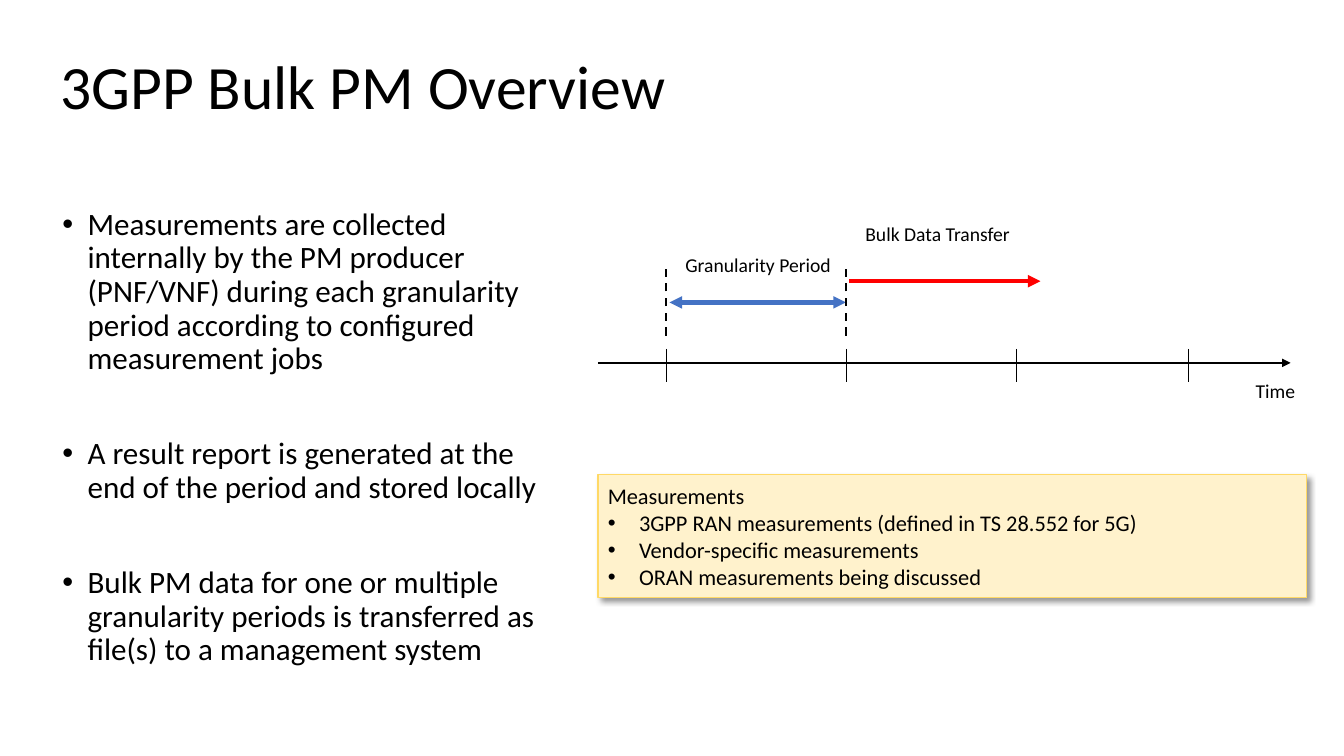
"""Build the 3GPP Bulk PM Overview slide."""
import pptx
import pptx.dml.color
import pptx.enum.dml
import pptx.enum.shapes
import pptx.enum.text
import pptx.oxml
import pptx.oxml.ns
import pptx.util

PX = 9144
ALIGN = pptx.enum.text.PP_ALIGN
ANCHOR = pptx.enum.text.MSO_ANCHOR
NS = pptx.oxml.ns.nsdecls("a")


def color(code):
    return pptx.dml.color.RGBColor.from_string(code)


def write(frame, lines, size, look, indent=0, plain=0):
    frame.word_wrap = True
    for i, line in enumerate(lines):
        para = frame.paragraphs[0] if i == 0 else frame.add_paragraph()
        run = para.add_run()
        run.text = line
        for key, val in {"name": "Calibri", "size": pptx.util.Pt(size)}.items():
            setattr(run.font, key, val)
        run.font.color.rgb = color("000000")
        for key, val in look.items():
            if key != "space_before" or i > 0:
                setattr(para, key, val)
        if indent and i >= plain:
            props = para._p.get_or_add_pPr()
            props.set("marL", str(indent * PX))
            props.set("indent", str(-indent * PX))
            props.append(pptx.oxml.parse_xml(f'<a:buFont {NS} typeface="Arial"/>'))
            props.append(pptx.oxml.parse_xml(f'<a:buChar {NS} char="•"/>'))


deck = pptx.Presentation()
deck.slide_width = 1333 * PX
deck.slide_height = 750 * PX
slide = deck.slides.add_slide(deck.slide_layouts[5])
shapes = slide.shapes

title = shapes.title
place = {"left": 52, "top": 52, "width": 914, "height": 118}
for key, val in place.items():
    setattr(title, key, val * PX)
frame = title.text_frame
fit = {"margin_left": 8 * PX, "margin_right": 8 * PX,
       "margin_top": 4 * PX, "margin_bottom": 4 * PX,
       "vertical_anchor": ANCHOR.TOP,
       "auto_size": pptx.enum.text.MSO_AUTO_SIZE.NONE}
for key, val in fit.items():
    setattr(frame, key, val)
write(frame, ["3GPP Bulk PM Overview"], 44,
      {"alignment": ALIGN.LEFT, "line_spacing": 0.9})

body = shapes.add_textbox(52 * PX, 202 * PX, 508 * PX, 480 * PX)
points = [
    "Measurements are collected internally by the PM producer (PNF/VNF) "
    "during each granularity period according to configured measurement jobs",
    "A result report is generated at the end of the period and stored locally",
    "Bulk PM data for one or multiple granularity periods is transferred "
    "as file(s) to a management system",
]
write(body.text_frame, points, 22.2,
      {"line_spacing": 0.9, "space_before": pptx.util.Pt(44)}, indent=25)

ticks = [661, 839, 1008, 1179]
start, end = ticks[:2]
lines = [(593, 360, 1280, 360, "000000", 1.5, ["tailEnd"])]
lines += [(x, 346, x, 379, "000000", 0.5, []) for x in ticks]
lines += [
    (end, 300, start + 3, 300, "4472C4", 3, ["headEnd", "tailEnd"]),
    (1032, 279, end + 3, 279, "FF0000", 3, ["headEnd"]),
]
lines += [(x, 333, x, 267, "000000", 1.5, ["dash"]) for x in (end, start)]
for x1, y1, x2, y2, tint, weight, marks in lines:
    link = shapes.add_connector(pptx.enum.shapes.MSO_CONNECTOR.STRAIGHT,
                                x1 * PX, y1 * PX, x2 * PX, y2 * PX)
    link.line.color.rgb = color(tint)
    link.line.width = pptx.util.Pt(weight)
    for mark in marks:
        if mark == "dash":
            link.line.dash_style = pptx.enum.dml.MSO_LINE.DASH
        else:
            link.line._get_or_add_ln().append(
                pptx.oxml.parse_xml(f'<a:{mark} {NS} type="triangle"/>'))
    link._element.spPr.append(pptx.oxml.parse_xml(f"<a:effectLst {NS}/>"))

labels = [("Granularity Period", 664, 246), ("Bulk Data Transfer", 842, 215),
          ("Time", 1177, 371)]
for text, x, y in labels:
    label = shapes.add_textbox(x * PX, y * PX, 176 * PX, 34 * PX)
    write(label.text_frame, [text], 14, {"alignment": ALIGN.CENTER})

box = shapes.add_shape(pptx.enum.shapes.MSO_SHAPE.RECTANGLE,
                       593 * PX, 471 * PX, 703 * PX, 122 * PX)
box.fill.solid()
box.fill.fore_color.rgb = color("FFF2CC")
box.line.color.rgb = color("FFD966")
box.line.width = pptx.util.Pt(1)
box._element.spPr.append(pptx.oxml.parse_xml(
    f'<a:effectLst {NS}><a:outerShdw blurRad="50800" dist="38100" '
    'dir="2700000" algn="tl" rotWithShape="0"><a:srgbClr val="000000">'
    '<a:alpha val="40000"/></a:srgbClr></a:outerShdw></a:effectLst>'))
box.text_frame.vertical_anchor = ANCHOR.MIDDLE
write(box.text_frame,
      ["Measurements", "3GPP RAN measurements (defined in TS 28.552 for 5G)",
       "Vendor-specific measurements", "ORAN measurements being discussed"],
      16, {"alignment": ALIGN.LEFT}, indent=31, plain=1)

deck.save("out.pptx")
